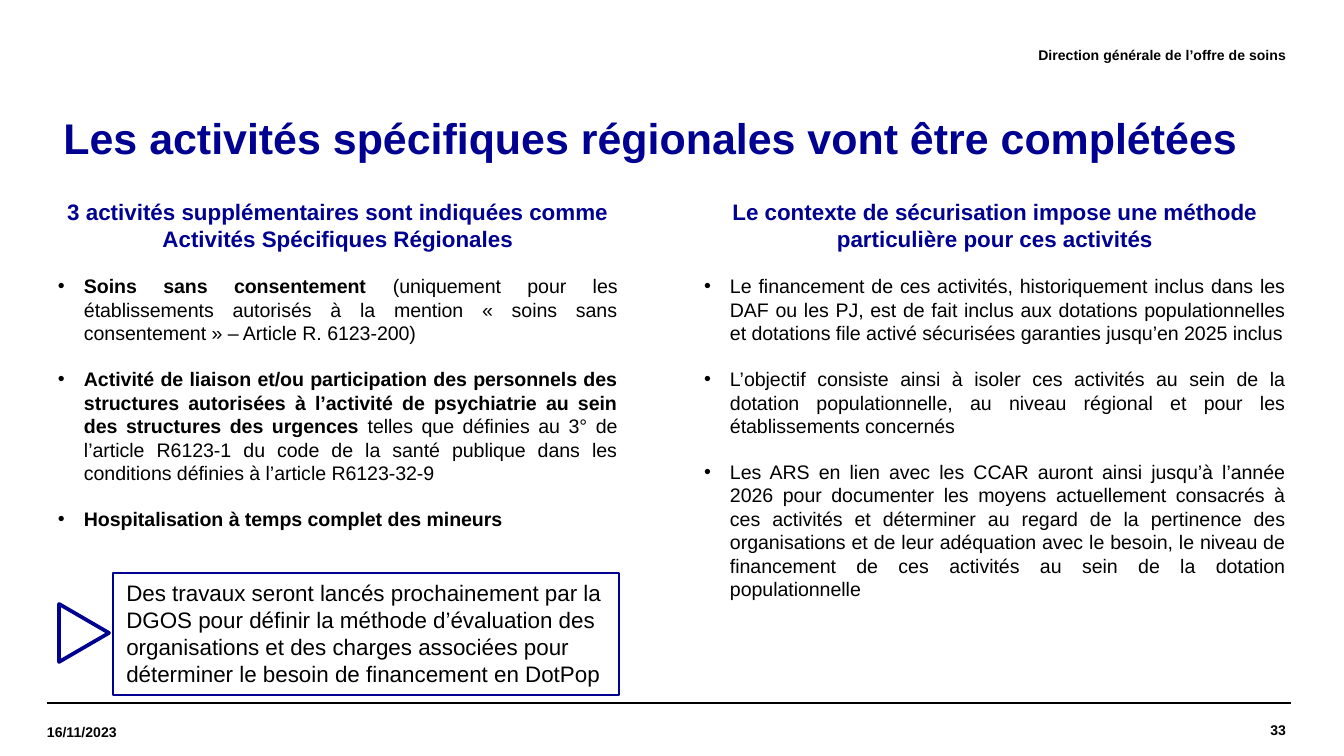
from lxml.etree import SubElement
from pptx import Presentation
from pptx.dml.color import RGBColor
from pptx.enum.shapes import MSO_CONNECTOR, MSO_SHAPE
from pptx.enum.text import MSO_ANCHOR, MSO_AUTO_SIZE, PP_ALIGN
from pptx.oxml.ns import qn
from pptx.util import Emu, Pt

EMU_PER_PX = 914400 / 134.4
FONT = "Arial"
COLORS = {"navy": "000091", "black": "000000", "white": "FFFFFF"}

LEFT_HEADING = "3 activités supplémentaires sont indiquées comme Activités Spécifiques Régionales"
LEFT_ITEMS = [
    [
        ("Soins sans consentement ", True),
        ("(uniquement pour les établissements autorisés à la mention "
         "« soins sans consentement » – Article R. 6123-200)", False),
    ],
    [
        ("Activité de liaison et/ou participation des personnels des structures autorisées "
         "à l’activité de psychiatrie au sein des structures des urgences ", True),
        ("telles que définies au 3° de l’article R6123-1 du code de la santé publique "
         "dans les conditions définies à l’article R6123-32-9", False),
    ],
    [("Hospitalisation à temps complet des mineurs", True)],
]
RIGHT_HEADING = "Le contexte de sécurisation impose une méthode particulière pour ces activités"
RIGHT_ITEMS = [
    [("Le financement de ces activités, historiquement inclus dans les DAF ou les PJ, "
      "est de fait inclus aux dotations populationnelles et dotations file activé "
      "sécurisées garanties jusqu’en 2025 inclus", False)],
    [("L’objectif consiste ainsi à isoler ces activités au sein de la dotation "
      "populationnelle, au niveau régional et pour les établissements concernés", False)],
    [("Les ARS en lien avec les CCAR auront ainsi jusqu’à l’année 2026 pour documenter "
      "les moyens actuellement consacrés à ces activités et déterminer au regard de la "
      "pertinence des organisations et de leur adéquation avec le besoin, le niveau de "
      "financement de ces activités au sein de la dotation populationnelle", False)],
]
CALLOUT = (
    "Des travaux seront lancés prochainement par la DGOS pour définir la méthode "
    "d’évaluation des organisations et des charges associées pour déterminer le besoin "
    "de financement en DotPop"
)


def px(value):
    return Emu(round(value * EMU_PER_PX))


def color(name):
    return RGBColor.from_string(COLORS[name])


def place(shape, box):
    shape.left, shape.top, shape.width, shape.height = map(px, box)


def clear_margins(frame):
    frame.margin_left = frame.margin_top = frame.margin_right = frame.margin_bottom = 0


def add_run(paragraph, text, size, color_name, bold=False):
    run = paragraph.add_run()
    run.text = text
    run.font.name = FONT
    run.font.size = Pt(size)
    run.font.bold = bold
    run.font.color.rgb = color(color_name)


def set_indent(paragraph, indent, bullet=None):
    properties = paragraph._p.get_or_add_pPr()
    properties.set("marL", str(px(indent)))
    properties.set("indent", str(-px(indent)))
    if bullet:
        SubElement(properties, qn("a:buFont")).set("typeface", FONT)
        SubElement(properties, qn("a:buChar")).set("char", bullet)
    else:
        SubElement(properties, qn("a:buNone"))


def fill_title(title):
    place(title, (47, 101, 1238, 79))
    frame = title.text_frame
    frame.word_wrap = True
    frame.auto_size = MSO_AUTO_SIZE.NONE
    frame.vertical_anchor = MSO_ANCHOR.MIDDLE
    paragraph = frame.paragraphs[0]
    paragraph.alignment = PP_ALIGN.LEFT
    paragraph.line_spacing = 0.9
    paragraph._p.get_or_add_pPr().set("marL", str(px(3)))
    add_run(paragraph, "Les activités spécifiques régionales vont être complétées", 23, "navy", True)


def fill_column(body, box, heading, items):
    place(body, box)
    frame = body.text_frame
    clear_margins(frame)
    frame.word_wrap = True
    frame.auto_size = MSO_AUTO_SIZE.NONE
    frame.vertical_anchor = MSO_ANCHOR.TOP
    paragraph = frame.paragraphs[0]
    set_indent(paragraph, 0)
    paragraph.alignment = PP_ALIGN.CENTER
    paragraph.space_before = Pt(0)
    paragraph.space_after = Pt(8)
    add_run(paragraph, heading, 12, "navy", True)
    for runs in items:
        paragraph = frame.add_paragraph()
        set_indent(paragraph, 26, "•")
        paragraph.alignment = PP_ALIGN.JUSTIFY
        paragraph.space_before = Pt(4)
        paragraph.space_after = Pt(8)
        for text, bold in runs:
            add_run(paragraph, text, 10.5, "black", bold)


def add_label(slide, box, text, alignment):
    label = slide.shapes.add_textbox(*map(px, box))
    frame = label.text_frame
    clear_margins(frame)
    frame.word_wrap = True
    frame.vertical_anchor = MSO_ANCHOR.MIDDLE
    paragraph = frame.paragraphs[0]
    paragraph.alignment = alignment
    add_run(paragraph, text, 7.5, "black", True)


def add_rule(slide, left, right, top):
    rule = slide.shapes.add_connector(MSO_CONNECTOR.STRAIGHT, px(left), px(top), px(right), px(top))
    rule.line.color.rgb = color("black")
    rule.line.width = Pt(0.8)
    SubElement(rule._element.spPr, qn("a:effectLst"))


def add_outlined_shape(slide, kind, box, line_width):
    shape = slide.shapes.add_shape(kind, *map(px, box))
    shape.shadow.inherit = False
    shape.line.color.rgb = color("navy")
    shape.line.width = Pt(line_width)
    return shape


def add_arrow(slide):
    arrow = add_outlined_shape(slide, MSO_SHAPE.ISOSCELES_TRIANGLE, (55, 608, 58, 50), 2)
    arrow.rotation = 90
    arrow.fill.solid()
    arrow.fill.fore_color.rgb = color("white")


def add_callout(slide):
    callout = add_outlined_shape(slide, MSO_SHAPE.RECTANGLE, (113, 573, 506, 122), 0.75)
    callout.fill.background()
    frame = callout.text_frame
    frame.word_wrap = True
    frame.auto_size = MSO_AUTO_SIZE.SHAPE_TO_FIT_TEXT
    frame.vertical_anchor = MSO_ANCHOR.TOP
    paragraph = frame.paragraphs[0]
    paragraph.alignment = PP_ALIGN.LEFT
    add_run(paragraph, CALLOUT, 12, "black")


def main():
    presentation = Presentation()
    presentation.slide_width = px(1344)
    presentation.slide_height = px(756)
    slide = presentation.slides.add_slide(presentation.slide_layouts[3])
    title, left_body, right_body = slide.placeholders

    for left, right in ((47, 1286), (52, 1291)):
        add_rule(slide, left, right, 703)
    add_label(slide, (1087, 703, 199, 53), "33", PP_ALIGN.RIGHT)
    add_label(slide, (47, 706, 178, 51), "16/11/2023", PP_ALIGN.LEFT)
    add_label(slide, (422, 28, 864, 53), "Direction générale de l’offre de soins", PP_ALIGN.RIGHT)
    fill_title(title)
    fill_column(left_body, (58, 198, 560, 350), LEFT_HEADING, LEFT_ITEMS)
    fill_column(right_body, (704, 198, 582, 465), RIGHT_HEADING, RIGHT_ITEMS)
    add_arrow(slide)
    add_callout(slide)

    presentation.save("out.pptx")


if __name__ == "__main__":
    main()
